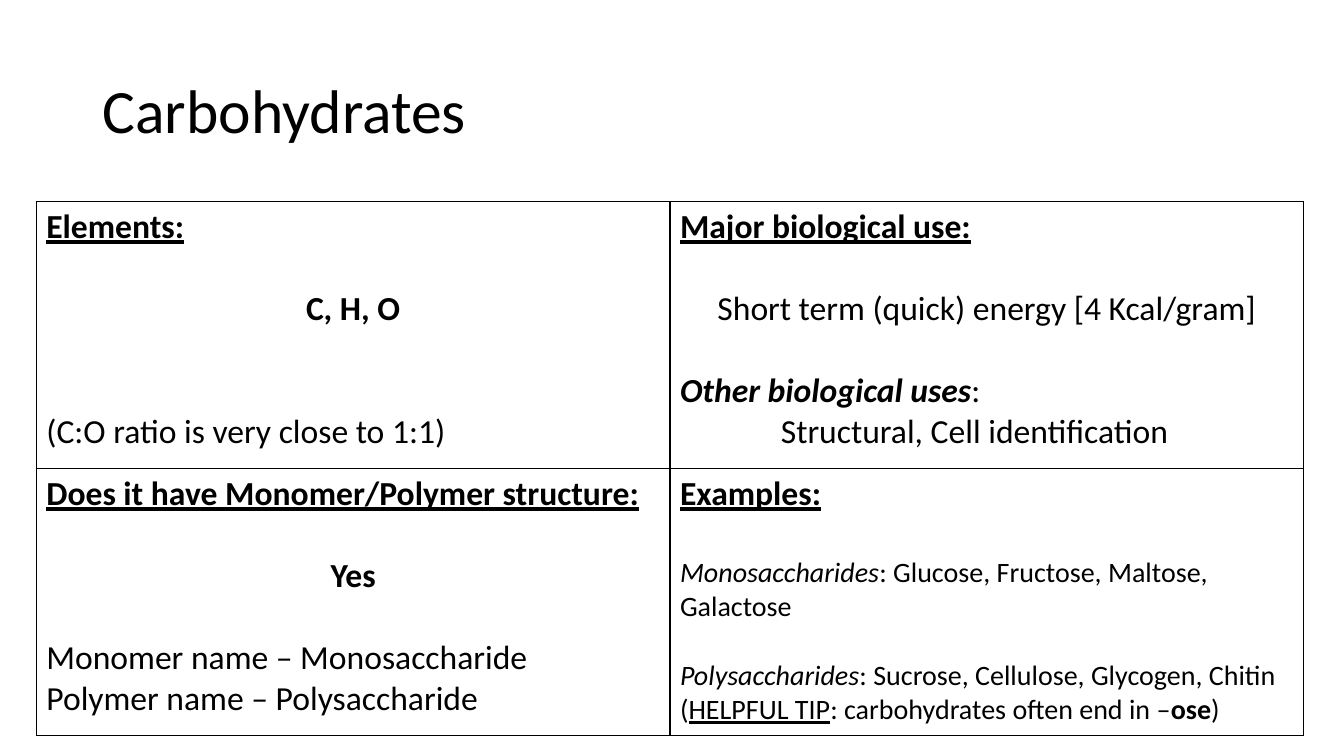
from lxml.etree import SubElement
from pptx import Presentation
from pptx.dml.color import RGBColor
from pptx.enum.text import MSO_ANCHOR, PP_ALIGN
from pptx.oxml.ns import qn
from pptx.util import Inches, Pt

BLACK = RGBColor(0x00, 0x00, 0x00)
FONT = "Calibri"
SLIDE_W, SLIDE_H = 13.33, 7.5
LINE_RATIO = 1.22  # Calibri line height per point of type

PLAIN = {}
BOLD = {"bold": True}
ITALIC = {"italic": True}
UNDERLINE = {"underline": True}
HEADING = {"bold": True, "underline": True}
SUBHEADING = {"bold": True, "italic": True}


def line(*runs, size=24, gap=0, center=False, indent=0):
    """Describe one paragraph; gap is the space above it in 24-point lines."""
    return {"runs": runs, "size": size, "gap": gap, "center": center, "indent": indent}


ELEMENTS = [
    line(("Elements:", HEADING)),
    line(("C, H, O", BOLD), gap=1, center=True),
    line(("(C:O ratio is very close to 1:1)", PLAIN), gap=2),
]
USES = [
    line(("Major biological use:", HEADING)),
    line(("Short term (quick) energy [4 Kcal/gram]", PLAIN), gap=1, center=True),
    line(("Other biological uses", SUBHEADING), (":", PLAIN), gap=1),
    line(("Structural, Cell identification", PLAIN), indent=1),
]
STRUCTURE = [
    line(("Does it have Monomer/Polymer structure:", HEADING)),
    line(("Yes", BOLD), gap=1, center=True),
    line(("Monomer name – Monosaccharide", PLAIN), gap=1),
    line(("Polymer name – Polysaccharide", PLAIN)),
]
EXAMPLES = [
    line(("Examples:", HEADING)),
    line(("Monosaccharides", ITALIC), (": Glucose, Fructose, Maltose, Galactose", PLAIN),
         size=20, gap=1),
    line(("Polysaccharides", ITALIC), (": Sucrose, Cellulose, Glycogen, Chitin", PLAIN),
         size=20, gap=20 / 24),
    line(("(", PLAIN), ("HELPFUL TIP", UNDERLINE),
         (": carbohydrates often end in –", PLAIN), ("ose", BOLD), (")", PLAIN), size=20),
]
QUADRANTS = [[ELEMENTS, USES], [STRUCTURE, EXAMPLES]]


def write_lines(frame, lines):
    frame.word_wrap = True
    for index, content in enumerate(lines):
        paragraph = frame.add_paragraph() if index else frame.paragraphs[0]
        paragraph.alignment = PP_ALIGN.CENTER if content["center"] else PP_ALIGN.LEFT
        paragraph.space_before = Pt(round(content["gap"] * 24 * LINE_RATIO, 1))
        if content["indent"]:
            properties = paragraph._p.get_or_add_pPr()
            properties.set("marL", str(Inches(content["indent"])))
            properties.set("indent", "0")
        for text, style in content["runs"]:
            run = paragraph.add_run()
            run.text = text
            run.font.color.rgb = BLACK
            formats = {"name": FONT, "size": Pt(content["size"]), "bold": False, **style}
            for key, value in formats.items():
                setattr(run.font, key, value)


def outline_cell(cell):
    properties = cell._tc.get_or_add_tcPr()
    for position, side in enumerate(("a:lnL", "a:lnR", "a:lnT", "a:lnB")):
        border = SubElement(properties, qn(side), w=str(Pt(1)))
        fill = SubElement(border, qn("a:solidFill"))
        SubElement(fill, qn("a:srgbClr"), val=str(BLACK))
        properties.insert(position, border)


def add_title(slide, left, top, width, height):
    frame = slide.shapes.add_textbox(*map(Inches, (left, top, width, height))).text_frame
    frame.vertical_anchor = MSO_ANCHOR.MIDDLE
    write_lines(frame, [line(("Carbohydrates", PLAIN), size=44)])
    frame.paragraphs[0].line_spacing = 0.9


def add_quadrants(slide, left, top, width, height):
    rows, columns = len(QUADRANTS), len(QUADRANTS[0])
    box = map(Inches, (left, top, width, height))
    table = slide.shapes.add_table(rows, columns, *box).table
    for flag in ("first_row", "horz_banding"):
        setattr(table, flag, False)
    for row, contents in enumerate(QUADRANTS):
        table.rows[row].height = Inches(height / rows)
        for column, lines in enumerate(contents):
            table.columns[column].width = Inches(width / columns)
            cell = table.cell(row, column)
            cell.fill.background()
            outline_cell(cell)
            write_lines(cell.text_frame, lines)


def main():
    deck = Presentation()
    deck.slide_width, deck.slide_height = Inches(SLIDE_W), Inches(SLIDE_H)
    slide = deck.slides.add_slide(deck.slide_layouts[6])
    add_title(slide, 0.92, 0.4, 11.5, 1.45)
    add_quadrants(slide, 0.36, 2, 12.57, 5.3)
    deck.save("out.pptx")


if __name__ == "__main__":
    main()
